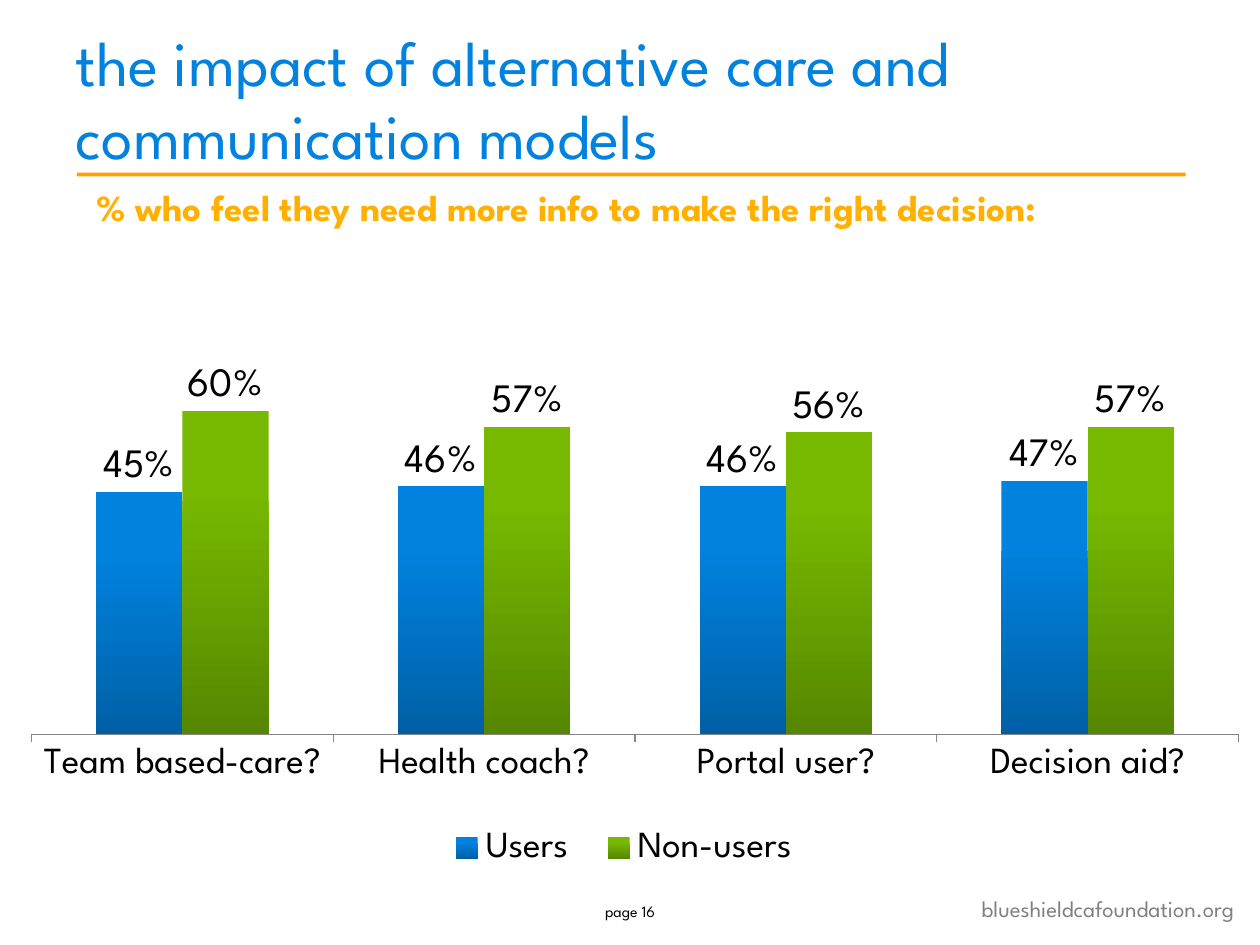
import pptx
import pptx.util
import pptx.chart.data
from lxml import etree
from pptx.dml.color import RGBColor
from pptx.enum.chart import XL_CHART_TYPE, XL_LABEL_POSITION, XL_LEGEND_POSITION, XL_TICK_MARK
from pptx.enum.shapes import MSO_SHAPE
from pptx.enum.text import MSO_ANCHOR, PP_ALIGN
from pptx.util import Inches, Pt

FACE = "League Spartan"
HUES = {
    "blue": "0082DE", "navy": "0060A6", "green": "76B900", "moss": "568700",
    "rule": "FFA100", "amber": "FFB000", "grey": "7E8082", "axis": "868686",
    "black": "000000",
}
CATS = ["Team based-care?", "Health coach?", "Portal user?", "Decision aid?"]
# Series name, values, top colour, bottom colour
BARS = [
    ("Users", (0.45, 0.46, 0.46, 0.47), "blue", "navy"),
    ("Non-users", (0.6, 0.57, 0.56, 0.57), "green", "moss"),
]


def hue(name):
    return RGBColor.from_string(HUES[name])


def style(font, size, color, bold=False):
    font.name = FACE
    font.size = Pt(size)
    font.bold = bold
    font.color.rgb = hue(color)


def write(frame, text, size, color, bold=False, align=PP_ALIGN.LEFT):
    frame.word_wrap = True
    para = frame.paragraphs[0]
    para.alignment = align
    run = para.add_run()
    run.text = text
    style(run.font, size, color, bold)
    return para


def add_note(slide, box, text, size, color, **look):
    shape = slide.shapes.add_textbox(*map(Inches, box))
    write(shape.text_frame, text, size, color, **look)
    return shape.text_frame


def add_head(slide, box):
    left, top, width, height = box
    title = slide.shapes.title
    title.left, title.top = Inches(left), Inches(top)
    title.width, title.height = Inches(width), Inches(height)
    title.text_frame.vertical_anchor = MSO_ANCHOR.BOTTOM
    para = write(title.text_frame,
                 "the impact of alternative care and communication models",
                 36, "blue")
    para.line_spacing = Pt(42)

    # Rule under the title
    rule = slide.shapes.add_shape(
        MSO_SHAPE.ROUNDED_RECTANGLE, Inches(left + 0.11),
        Inches(top + height - 0.05), Inches(width - 0.2), Inches(0.03))
    rule.shadow.inherit = False
    rule.fill.solid()
    rule.fill.fore_color.rgb = hue("rule")
    rule.line.fill.background()


def set_place(part, box, inner=False):
    """Fix a plot area or legend at fractions of the chart."""
    space = "{http://schemas.openxmlformats.org/drawingml/2006/chart}"
    for old in part.findall(space + "layout"):
        part.remove(old)
    layout = etree.Element(space + "layout")
    manual = etree.SubElement(layout, space + "manualLayout")
    pairs = [("layoutTarget", "inner")] if inner else []
    pairs += [("xMode", "edge"), ("yMode", "edge")]
    pairs += zip("xywh", map(str, box))
    for tag, value in pairs:
        etree.SubElement(manual, space + tag).set("val", value)
    if inner:
        part.insert(0, layout)
    else:
        part.find(space + "legendPos").addnext(layout)


def add_bars(slide, box):
    data = pptx.chart.data.CategoryChartData(number_format="0%")
    data.categories = CATS
    for name, values, *_ in BARS:
        data.add_series(name, values)
    chart = slide.shapes.add_chart(
        XL_CHART_TYPE.COLUMN_CLUSTERED, *map(Inches, box), data).chart
    chart.has_title = False
    style(chart.font, 18, "black")

    # Axes
    cat, val = chart.category_axis, chart.value_axis
    style(cat.tick_labels.font, 21, "black")
    cat.major_tick_mark = XL_TICK_MARK.OUTSIDE
    cat.format.line.color.rgb = hue("axis")
    cat.format.line.width = Pt(0.75)
    val.minimum_scale, val.maximum_scale = 0, 0.8
    val.has_major_gridlines = False
    val.visible = False

    # Bars and their labels
    plot = chart.plots[0]
    plot.gap_width, plot.overlap = 150, 0
    plot.vary_by_categories = False
    for series, (_, _, light, dark) in zip(plot.series, BARS):
        fill = series.format.fill
        fill.gradient()
        fill.gradient_angle = 270
        for stop, place, color in zip(fill.gradient_stops, (0.25, 1), (light, dark)):
            stop.position = place
            stop.color.rgb = hue(color)
        labels = series.data_labels
        labels.show_value = True
        labels.number_format = "0%"
        labels.number_format_is_linked = False
        labels.position = XL_LABEL_POSITION.OUTSIDE_END
        style(labels.font, 23, "black")

    # Legend
    chart.has_legend = True
    legend = chart.legend
    legend.position = XL_LEGEND_POSITION.TOP
    legend.include_in_layout = False
    style(legend.font, 21, "black")
    area = chart.element.xpath("c:chart/c:plotArea")[0]
    set_place(area, (0.025, 0.179, 0.958, 0.571), inner=True)
    set_place(chart.element.xpath("c:chart/c:legend")[0], (0.34, 0.86, 0.31, 0.08))


def add_foot(slide, box):
    left, top, width, height = box
    add_note(slide, (left + 7.2, top + 0.08, 2.69, 0.32),
             "blueshieldcafoundation.org", 13, "grey", align=PP_ALIGN.RIGHT)
    page = add_note(slide, (left + (width - 0.89) / 2, top, 0.89, height),
                    "page 16", 9, "black", align=PP_ALIGN.CENTER)
    page.vertical_anchor = MSO_ANCHOR.MIDDLE


def main():
    deck = pptx.Presentation()
    deck.slide_width, deck.slide_height = Inches(10), Inches(7.5)
    slide = deck.slides.add_slide(deck.slide_layouts[5])
    add_head(slide, (0.5, 0.25, 9, 1.17))
    add_bars(slide, (0, 1.33, 10, 6))
    add_note(slide, (0.67, 1.42, 8.75, 0.45),
             "% who feel they need more info to make the right decision:",
             21, "amber", bold=True)
    add_foot(slide, (0, 6.97, 10, 0.52))
    deck.save("out.pptx")


if __name__ == "__main__":
    main()
